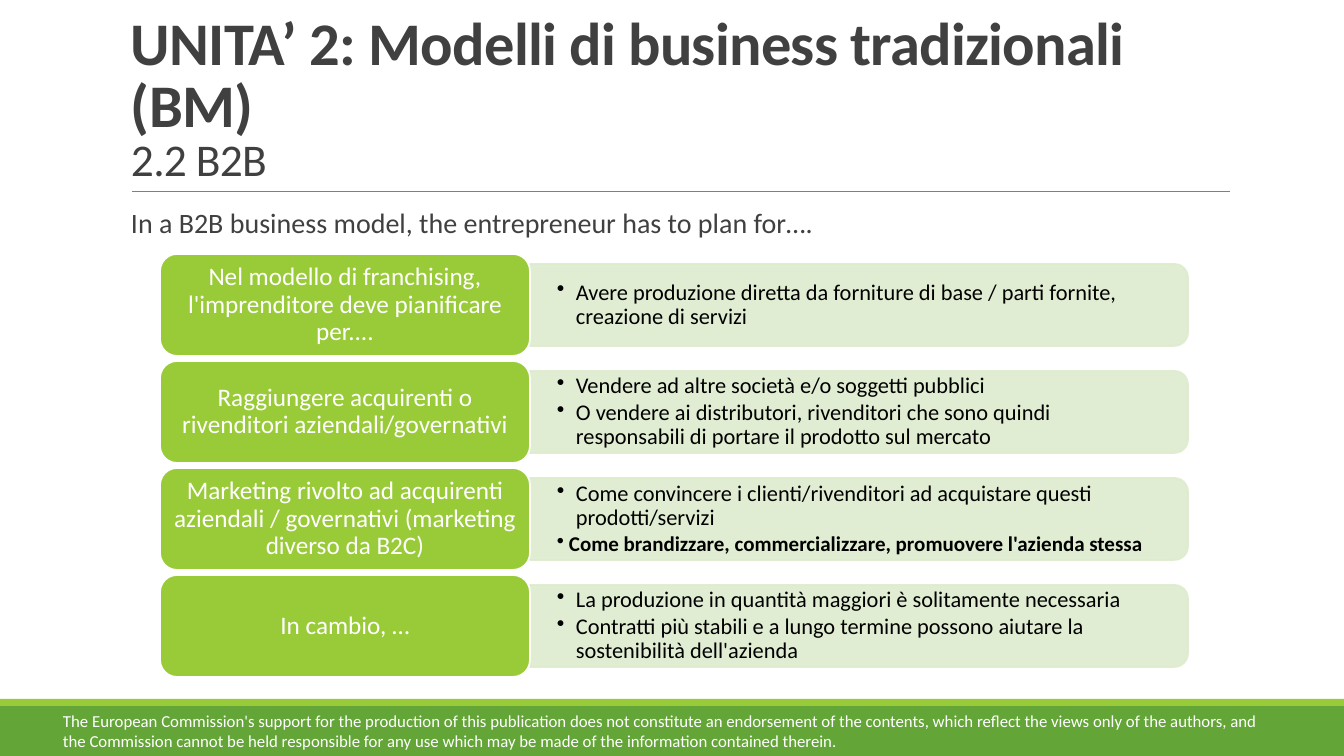
from lxml import etree
from pptx import Presentation
from pptx import util as u
from pptx.dml.color import RGBColor
from pptx.enum import shapes, text
from pptx.oxml.ns import qn

PX = 914400 / 100.8
COLORS = {
    "white": "FFFFFF",
    "black": "000000",
    "ink": "404040",
    "rule": "808080",
    "lime": "99CB38",
    "green": "63A537",
    "pale": "DEECCE",
}
PITCH = 107  # distance from one row to the next

ROWS = [
    ("Nel modello di franchising, l'imprenditore deve pianificare per....",
     ["Avere produzione diretta da forniture di base / parti fornite, creazione di servizi"]),
    ("Raggiungere acquirenti o rivenditori aziendali/governativi",
     ["Vendere ad altre società e/o soggetti pubblici",
      "O vendere ai distributori, rivenditori che sono quindi responsabili di portare "
      "il prodotto sul mercato"]),
    ("Marketing rivolto ad acquirenti aziendali / governativi (marketing diverso da B2C)",
     ["Come convincere i clienti/rivenditori ad acquistare questi prodotti/servizi",
      ("Come brandizzare, commercializzare, promuovere l'azienda stessa",
       {"size": 15, "bold": True, "bullet": 12})]),
    ("In cambio, …",
     ["La produzione in quantità maggiori è solitamente necessaria",
      "Contratti più stabili e a lungo termine possono aiutare la sostenibilità dell'azienda"]),
]
DISCLAIMER = (
    "The European Commission's support for the production of this publication does not "
    "constitute an endorsement of the contents, which reflect the views only of the authors, "
    "and the Commission cannot be held responsible for any use which may be made of the "
    "information contained therein."
)


def px(length):
    return u.Emu(round(length * PX))


def rgb(name):
    return RGBColor.from_string(COLORS[name])


def write(para, words, size=16, color="black", bold=False, tracking=0,
          line=0.9, after=0, align=None, bullet=0):
    """Add a span to the paragraph; bullet is the hanging indent in px."""
    para.line_spacing = line
    para.space_after = u.Pt(after)
    para.alignment = align
    span = para.add_run()
    span.text = words
    span.font.name = "Calibri"
    span.font.size = u.Pt(size)
    span.font.bold = bold
    span.font.color.rgb = rgb(color)
    if tracking:
        span.font._element.set("spc", str(tracking))
    if bullet:
        properties = para._p.get_or_add_pPr()
        properties.set("marL", str(px(bullet)))
        properties.set("indent", str(-px(bullet)))
        etree.SubElement(properties, qn("a:buChar")).set("char", "•")


def set_frame(frame, anchor, inset_x, inset_y):
    frame.word_wrap = True
    frame.vertical_anchor = anchor
    frame.margin_left = frame.margin_right = px(inset_x)
    frame.margin_top = frame.margin_bottom = px(inset_y)
    return frame


def add_text_box(page, box, anchor=text.MSO_ANCHOR.TOP, inset_x=10, inset_y=5):
    shape = page.shapes.add_textbox(*map(px, box))
    return set_frame(shape.text_frame, anchor, inset_x, inset_y)


def add_block(page, kind, box, fill, line=None, opacity=100):
    shape = page.shapes.add_shape(kind, *map(px, box))
    shape.shadow.inherit = False
    shape.fill.solid()
    shape.fill.fore_color.rgb = rgb(fill)
    if line:
        shape.line.color.rgb = rgb(line)
        shape.line.width = u.Pt(1.25)
    else:
        shape.line.fill.background()
    if opacity < 100:
        for color in shape._element.spPr.iter(qn("a:srgbClr")):
            etree.SubElement(color, qn("a:alpha")).set("val", str(opacity * 1000))
    return shape


def add_heading(page, box):
    left, top, width, height = box
    # Title and subtitle
    frame = add_text_box(page, box, text.MSO_ANCHOR.BOTTOM)
    para = frame.paragraphs[0]
    write(para, "UNITA’ 2: Modelli di business tradizionali (BM)", size=43.2,
          color="ink", bold=True, tracking=-50, line=0.85)
    para.add_line_break()
    write(para, "2.2 B2B", size=32.4, color="ink", tracking=-50, line=0.85)
    # Rule under the title
    bottom = top + height
    rule = page.shapes.add_connector(
        shapes.MSO_CONNECTOR.STRAIGHT,
        px(left + 11), px(bottom), px(left + width), px(bottom))
    rule.line.color.rgb = rgb("rule")
    rule.line.width = u.Pt(0.5)
    etree.SubElement(rule._element.spPr, qn("a:effectLst"))
    # Lead sentence
    lead = add_text_box(page, (left, bottom + 13, width, 40))
    write(lead.paragraphs[0], "In a B2B business model, the entrepreneur has to plan for….",
          size=20, color="ink")


def add_row(page, box, label, items):
    left, top, width, height = box
    label_width, bar_height = 370, 82
    bar_left, bar_width = left + label_width, width - label_width
    center_x, center_y = bar_left + bar_width / 2, top + height / 2
    # Pale bar, turned so its rounded corners face right
    bar = add_block(page, shapes.MSO_SHAPE.ROUND_2_SAME_RECTANGLE,
                    (center_x - bar_height / 2, center_y - bar_width / 2, bar_height, bar_width),
                    "pale", "pale", opacity=90)
    bar.rotation = 90
    # Bulleted details
    frame = add_text_box(page, (bar_left, center_y - 37, bar_width - 4, 74),
                         text.MSO_ANCHOR.MIDDLE, 27, 14)
    for index, item in enumerate(items):
        words, changes = item if isinstance(item, tuple) else (item, {})
        para = frame.add_paragraph() if index else frame.paragraphs[0]
        write(para, words, **{"bullet": 19, "after": 2, **changes})
    # Label
    block = add_block(page, shapes.MSO_SHAPE.ROUNDED_RECTANGLE,
                      (left, top, label_width, height), "lime", "white")
    frame = set_frame(block.text_frame, text.MSO_ANCHOR.MIDDLE, 7, 4)
    write(frame.paragraphs[0], label, size=18, color="white", align=text.PP_ALIGN.CENTER)


def add_footer(page, box):
    left, top, width, height = box
    add_block(page, shapes.MSO_SHAPE.RECTANGLE, box, "green")
    add_block(page, shapes.MSO_SHAPE.RECTANGLE, (left, top - 7, width, 7), "lime")
    frame = add_text_box(page, (left + 53, top, 1240, height))
    write(frame.paragraphs[0], DISCLAIMER, size=12, color="white", line=1.0)


def main():
    deck = Presentation()
    deck.slide_width, deck.slide_height = px(1344), px(756)
    page = deck.slides.add_slide(deck.slide_layouts[6])
    add_footer(page, (0, 706, 1344, 50))
    add_heading(page, (121, 31, 1109, 160))
    for index, (label, items) in enumerate(ROWS):
        add_row(page, (160, 254 + index * PITCH, 1028, 102), label, items)
    deck.save("out.pptx")


if __name__ == "__main__":
    main()
